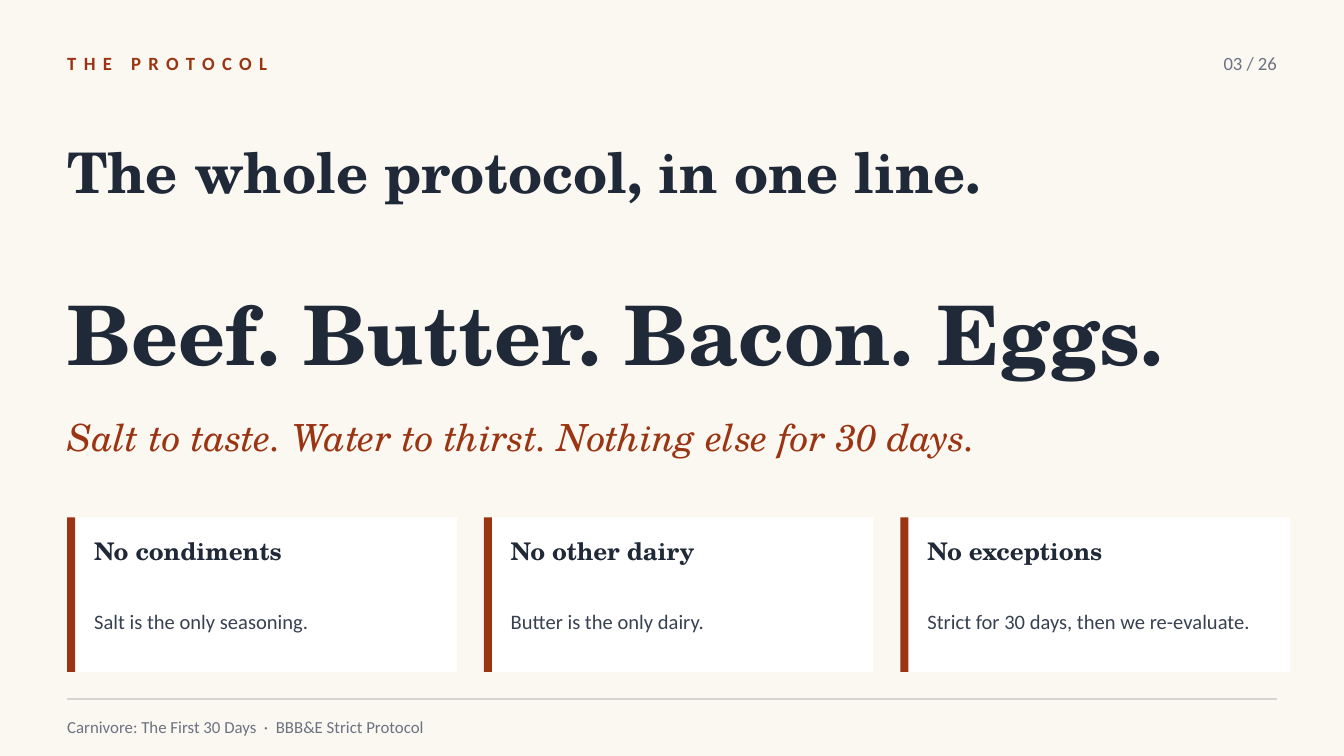
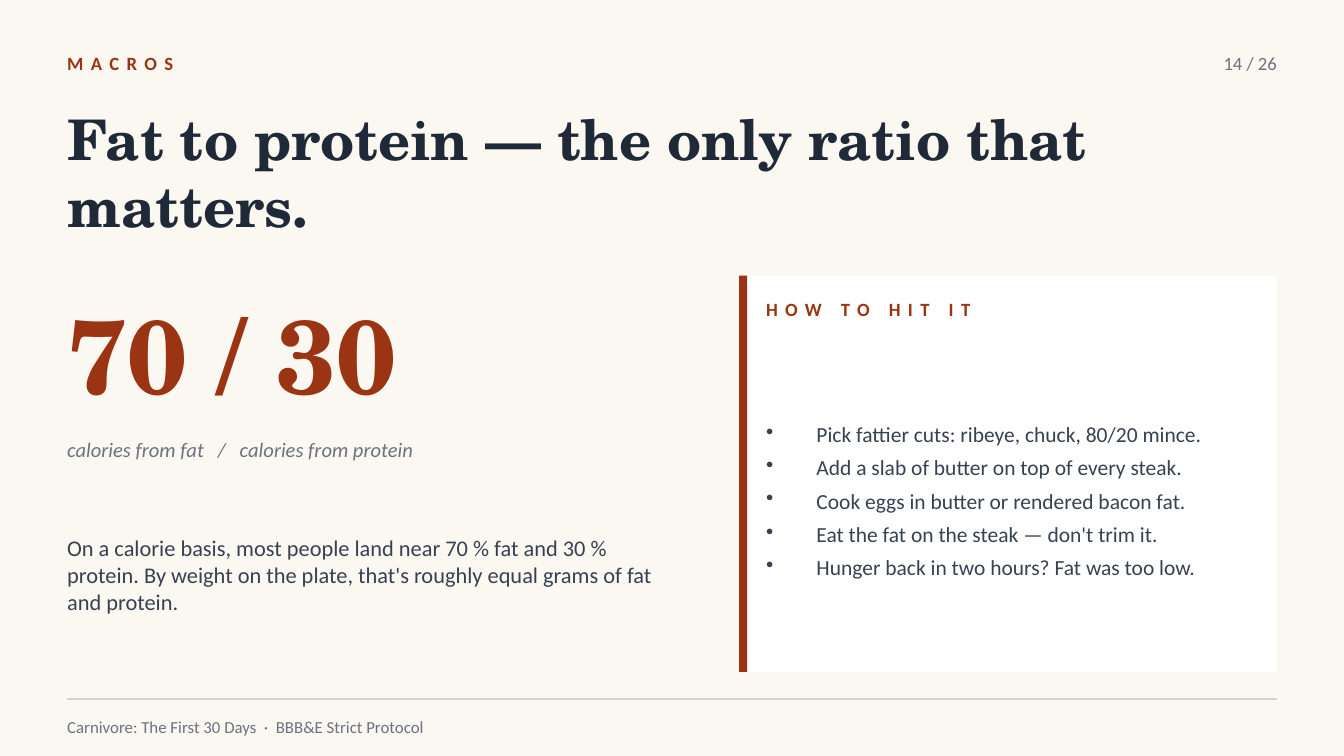
from dataclasses import dataclass

from lxml import etree
from pptx import Presentation
from pptx.dml.color import RGBColor
from pptx.enum.shapes import MSO_CONNECTOR, MSO_SHAPE
from pptx.enum.text import MSO_ANCHOR, PP_ALIGN
from pptx.oxml.ns import qn
from pptx.slide import Slide
from pptx.util import Pt

RECT = MSO_SHAPE.RECTANGLE
STRAIGHT = MSO_CONNECTOR.STRAIGHT
MIDDLE = MSO_ANCHOR.MIDDLE
LEFT, RIGHT = PP_ALIGN.LEFT, PP_ALIGN.RIGHT

COLORS = {
    "paper": "FBF8F2",
    "card": "FFFFFF",
    "rust": "9A3412",
    "ink": "1F2937",
    "body": "374151",
    "muted": "6B7280",
    "rule": "D6D3D1",
}
SERIF, SANS = "TeX Gyre Schola", "Calibri"

# Shared layout, in points
SLIDE_W, SLIDE_H = 720, 405
MARGIN = 36
CONTENT_W = SLIDE_W - 2 * MARGIN
HEADER_Y, HEADER_H = 23.04, 21.6
RULE_Y = 374.4
BAR_W = 4.32
CARD_PAD = 14.4
BULLET_INDENT = 27
PAGE_COUNT = 26
FOOTER = "Carnivore: The First 30 Days  ·  BBB&E Strict Protocol"


@dataclass(frozen=True)
class Box:
    x: float
    y: float
    w: float
    h: float


@dataclass(frozen=True)
class Style:
    size: float
    color: str
    font: str = SANS
    bold: bool = False
    italic: bool = False
    tracking: float = 0


@dataclass(frozen=True)
class Rule:
    heading: str
    detail: str


EYEBROW = Style(10, "rust", bold=True, tracking=4)
PAGE_NO = Style(10, "muted")
TITLE = Style(30, "ink", SERIF, bold=True)
FOOTNOTE = Style(9, "muted")
SLOGAN = Style(44, "ink", SERIF, bold=True)
TAGLINE = Style(20, "rust", SERIF, italic=True)
CARD_HEADING = Style(13, "ink", SERIF, bold=True)
CARD_DETAIL = Style(11, "body")
RATIO = Style(56, "rust", SERIF, bold=True)
CAPTION = Style(11, "muted", italic=True)
BODY = Style(12, "body")
TIP = Style(11.5, "body")

RULES = [
    Rule("No condiments", "Salt is the only seasoning."),
    Rule("No other dairy", "Butter is the only dairy."),
    Rule("No exceptions", "Strict for 30 days, then we re-evaluate."),
]
TIPS = [
    "Pick fattier cuts: ribeye, chuck, 80/20 mince.",
    "Add a slab of butter on top of every steak.",
    "Cook eggs in butter or rendered bacon fat.",
    "Eat the fat on the steak — don't trim it.",
    "Hunger back in two hours? Fat was too low.",
]


def rgb(name: str) -> RGBColor:
    return RGBColor.from_string(COLORS[name])


def add_text(s: Slide, box: Box, lines: list[str], style: Style,
             align: PP_ALIGN = LEFT, bulleted: bool = False) -> None:
    sp = s.shapes.add_textbox(Pt(box.x), Pt(box.y), Pt(box.w), Pt(box.h))
    tf = sp.text_frame
    tf.word_wrap = True
    tf.vertical_anchor = MIDDLE
    tf.margin_left = tf.margin_right = tf.margin_top = tf.margin_bottom = 0
    tf.text = "\n".join(lines)
    for p in tf.paragraphs:
        p.alignment = align
        if bulleted:
            pPr = p._p.get_or_add_pPr()
            pPr.set("marL", str(Pt(BULLET_INDENT)))
            pPr.set("indent", str(-Pt(BULLET_INDENT)))
            etree.SubElement(pPr, qn("a:buChar"), char="•")
            p.space_after = Pt(4)
        for r in p.runs:
            r.font.name = style.font
            r.font.size = Pt(style.size)
            r.font.bold = style.bold
            r.font.italic = style.italic
            r.font.color.rgb = rgb(style.color)
            if style.tracking:
                r._r.get_or_add_rPr().set("spc", str(int(style.tracking * 100)))


def add_rect(s: Slide, box: Box, color: str) -> None:
    sp = s.shapes.add_shape(RECT, Pt(box.x), Pt(box.y), Pt(box.w), Pt(box.h))
    sp.shadow.inherit = False
    sp.fill.solid()
    sp.fill.fore_color.rgb = rgb(color)
    sp.line.fill.background()


def add_card(s: Slide, box: Box) -> None:
    add_rect(s, box, "card")
    add_rect(s, Box(box.x, box.y, BAR_W, box.h), "rust")


def add_frame(prs: Presentation, eyebrow: str, page: int, title: str) -> Slide:
    """Add a slide with the shared background, header, title and footer."""
    s = prs.slides.add_slide(prs.slide_layouts[6])
    s.background.fill.solid()
    s.background.fill.fore_color.rgb = rgb("paper")
    # Header and title
    add_text(s, Box(MARGIN, HEADER_Y, 432, HEADER_H), [eyebrow], EYEBROW)
    add_text(s, Box(SLIDE_W - MARGIN - 72, HEADER_Y, 72, HEADER_H),
             [f"{page:02d} / {PAGE_COUNT}"], PAGE_NO, RIGHT)
    add_text(s, Box(MARGIN, 54, CONTENT_W, 75.6), [title], TITLE)
    # Footer
    line = s.shapes.add_connector(STRAIGHT, Pt(MARGIN), Pt(RULE_Y),
                                  Pt(SLIDE_W - MARGIN), Pt(RULE_Y))
    line.line.color.rgb = rgb("rule")
    line.line.width = Pt(0.75)
    etree.SubElement(line._element.spPr, qn("a:effectLst"))
    add_text(s, Box(MARGIN, 380.16, CONTENT_W, 18), [FOOTER], FOOTNOTE)
    return s


def build_protocol(prs: Presentation) -> None:
    s = add_frame(prs, "THE PROTOCOL", 3, "The whole protocol, in one line.")
    add_text(s, Box(MARGIN, 147.6, CONTENT_W, 61.2),
             ["Beef. Butter. Bacon. Eggs."], SLOGAN)
    add_text(s, Box(MARGIN, 216, CONTENT_W, 36),
             ["Salt to taste. Water to thirst. Nothing else for 30 days."], TAGLINE)
    # Row of rule cards
    card_w, gap, top = 208.8, 14.4, 277.2
    for i, rule in enumerate(RULES):
        x = MARGIN + i * (card_w + gap)
        add_card(s, Box(x, top, card_w, 82.8))
        text_x, text_w = x + CARD_PAD, card_w - 18
        add_text(s, Box(text_x, top + 7.2, text_w, 21.6), [rule.heading], CARD_HEADING)
        add_text(s, Box(text_x, top + 30.24, text_w, 50.4), [rule.detail], CARD_DETAIL)


def build_macros(prs: Presentation) -> None:
    s = add_frame(prs, "MACROS", 14, "Fat to protein — the only ratio that matters.")
    # Ratio column
    column_w = 324
    add_text(s, Box(MARGIN, 151.2, column_w, 75.6), ["70 / 30"], RATIO)
    add_text(s, Box(MARGIN, 228.96, column_w, 23.04),
             ["calories from fat   /   calories from protein"], CAPTION)
    add_text(s, Box(MARGIN, 262.8, column_w, 90),
             ["On a calorie basis, most people land near 70 % fat and 30 % protein. "
              "By weight on the plate, that's roughly equal grams of fat and protein."],
             BODY)
    # Tips card
    card = Box(396, 147.6, 288, 212.4)
    add_card(s, card)
    text_x, text_w = card.x + CARD_PAD, card.w - 21.6
    add_text(s, Box(text_x, card.y + 7.2, text_w, 21.6), ["HOW TO HIT IT"], EYEBROW)
    add_text(s, Box(text_x, card.y + 32.4, text_w, 176.4), TIPS, TIP, bulleted=True)


def main() -> None:
    prs = Presentation()
    prs.slide_width, prs.slide_height = Pt(SLIDE_W), Pt(SLIDE_H)
    build_protocol(prs)
    build_macros(prs)
    prs.save("out.pptx")


if __name__ == "__main__":
    main()
